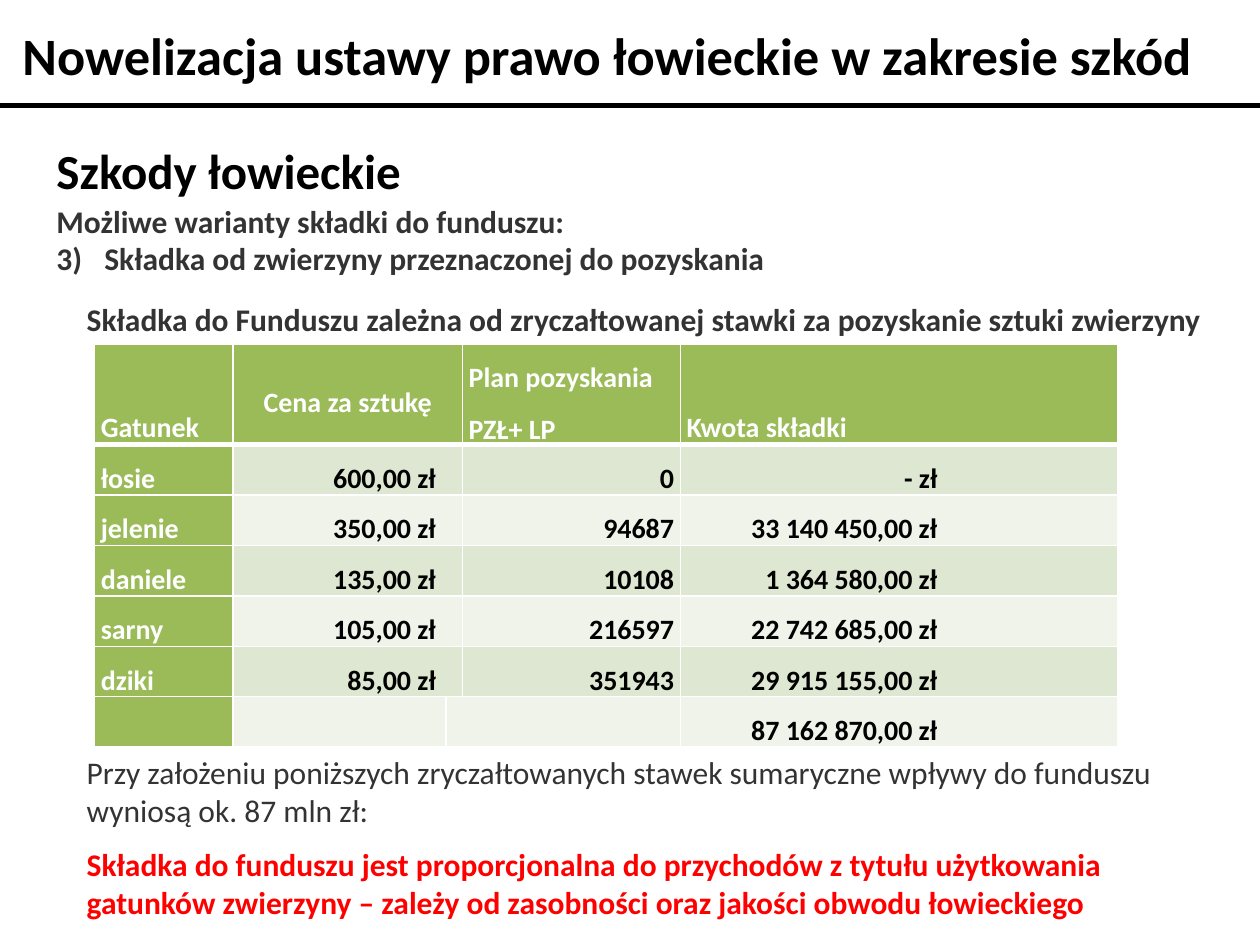
from lxml import etree
from pptx import Presentation
from pptx import util as u
from pptx.dml.color import RGBColor
from pptx.enum import shapes, text
from pptx.oxml.ns import qn

FONT = "Calibri"
BLACK, GREY, WHITE, RED = "000000", "333333", "FFFFFF", "FF0000"
GREEN, BANDS = "9BBB59", ("DEE7D1", "EFF3EA")
LEFT, CENTER, RIGHT = text.PP_ALIGN.LEFT, text.PP_ALIGN.CENTER, text.PP_ALIGN.RIGHT

TITLE = "Nowelizacja ustawy prawo łowieckie w zakresie szkód"
HEADING = "Szkody łowieckie"
VARIANTS = ["Możliwe warianty składki do funduszu:",
            "Składka od zwierzyny przeznaczonej do pozyskania"]
CAPTION = "Składka do Funduszu zależna od zryczałtowanej stawki za pozyskanie sztuki zwierzyny"
NOTE = ("Przy założeniu poniższych zryczałtowanych stawek sumaryczne wpływy "
        "do funduszu wyniosą ok. 87 mln zł:")
CONCLUSION = ("Składka do funduszu jest proporcjonalna do przychodów z tytułu użytkowania "
              "gatunków zwierzyny – zależy od zasobności oraz jakości obwodu łowieckiego")

HEADER = ["Gatunek", "Cena za sztukę", "Plan pozyskania PZŁ+ LP", "Kwota składki"]
SPECIES = [
    ["łosie", "600,00 zł", "0", "- zł"],
    ["jelenie", "350,00 zł", "94687", "33 140 450,00 zł"],
    ["daniele", "135,00 zł", "10108", "1 364 580,00 zł"],
    ["sarny", "105,00 zł", "216597", "22 742 685,00 zł"],
    ["dziki", "85,00 zł", "351943", "29 915 155,00 zł"],
]
TOTAL = ["", "", "", "87 162 870,00 zł"]
ROWS = [HEADER, *SPECIES, TOTAL]

# The narrow third column joins the price column, and the plan column in the total row.
COLUMN_WIDTHS = [1.1, 1.69, 0.13, 1.73, 3.47]
HEADER_HEIGHT, ROW_HEIGHT = 0.79, 0.4
GRID_COLUMNS, TOTAL_COLUMNS = [0, 1, 3, 4], [0, 1, 2, 4]
ALIGNMENTS = [LEFT, RIGHT, RIGHT, RIGHT]
RIGHT_INSETS = [0.05, 0.21, 0.05, 1.43]


def rgb(value):
    return RGBColor.from_string(value)


def write(paragraph, words, size=18, color=GREY, bold=True, align=LEFT, spacing=None):
    paragraph.text = words
    paragraph.alignment = align
    paragraph.line_spacing = spacing
    font = paragraph.font
    font.name, font.size, font.bold = FONT, u.Pt(size), bold
    font.color.rgb = rgb(color)


def add_text(slide, place, *lines, wrap=True, **style):
    frame = slide.shapes.add_textbox(*map(u.Inches, place)).text_frame
    frame.word_wrap = wrap
    for index, line in enumerate(lines):
        paragraph = frame.add_paragraph() if index else frame.paragraphs[0]
        write(paragraph, line, **style)
    return frame


def number(paragraph, start, indent):
    props = paragraph._p.get_or_add_pPr()
    props.set("marL", str(u.Inches(indent)))
    props.set("indent", str(-u.Inches(indent)))
    etree.SubElement(props, qn("a:buFont"), typeface="+mj-lt")
    etree.SubElement(props, qn("a:buAutoNum"), type="arabicParenR", startAt=str(start))
    # Numbering has to come before the default run format.
    for default in props.findall(qn("a:defRPr")):
        props.append(default)


def add_borders(cell, bottom):
    props = cell._tc.get_or_add_tcPr()
    for index, (side, width) in enumerate([("L", 1), ("R", 1), ("T", 1), ("B", bottom)]):
        border = etree.Element(qn(f"a:ln{side}"), w=str(u.Pt(width)))
        fill = etree.SubElement(border, qn("a:solidFill"))
        etree.SubElement(fill, qn("a:srgbClr"), val=WHITE)
        props.insert(index, border)


def add_contributions(slide, left, top):
    height = HEADER_HEIGHT + ROW_HEIGHT * (len(ROWS) - 1)
    table = slide.shapes.add_table(
        len(ROWS), len(COLUMN_WIDTHS),
        *map(u.Inches, (left, top, sum(COLUMN_WIDTHS), height))).table
    table.first_row = table.horz_banding = False
    for column, width in zip(table.columns, COLUMN_WIDTHS):
        column.width = u.Inches(width)

    last = len(ROWS) - 1
    for r, values in enumerate(ROWS):
        table.rows[r].height = u.Inches(ROW_HEIGHT if r else HEADER_HEIGHT)
        for c in range(len(COLUMN_WIDTHS)):
            cell = table.cell(r, c)
            cell.fill.solid()
            cell.fill.fore_color.rgb = rgb(GREEN if r == 0 or c == 0 else BANDS[(r - 1) % 2])
            add_borders(cell, bottom=1 if r else 3)
        joined = 2 if r == last else 1
        table.cell(r, joined).merge(table.cell(r, joined + 1))

        for c, words in enumerate(values):
            cell = table.cell(r, (TOTAL_COLUMNS if r == last else GRID_COLUMNS)[c])
            cell.margin_top = cell.margin_bottom = 0
            cell.margin_left = u.Inches(0.05)
            cell.margin_right = u.Inches(RIGHT_INSETS[c] if r else 0.05)
            cell.vertical_anchor = text.MSO_ANCHOR.BOTTOM
            align = ALIGNMENTS[c] if r else LEFT
            if r == 0 and c == 1:
                align, cell.vertical_anchor = CENTER, text.MSO_ANCHOR.MIDDLE
            write(cell.text_frame.paragraphs[0], words, size=16, align=align, spacing=1.5,
                  color=WHITE if r == 0 or c == 0 else BLACK)


def main():
    deck = Presentation()
    deck.slide_width, deck.slide_height = u.Inches(10), u.Inches(7.5)
    slide = deck.slides.add_slide(deck.slide_layouts[6])

    rule = slide.shapes.add_connector(
        shapes.MSO_CONNECTOR.STRAIGHT, 0, u.Inches(0.84), deck.slide_width, u.Inches(0.84))
    rule.line.color.rgb, rule.line.width = rgb(BLACK), u.Pt(2.75)
    etree.SubElement(rule._element.spPr, qn("a:effectLst"))

    add_text(slide, (0.08, 0.13, 9.88, 0.61), TITLE, size=30, color=BLACK)
    add_text(slide, (0.35, 1.07, 2.97, 0.57), HEADING, size=28, color=BLACK, wrap=False)
    variants = add_text(slide, (0.35, 1.55, 9.13, 0.71), *VARIANTS)
    number(variants.paragraphs[1], start=3, indent=0.38)
    add_text(slide, (0.59, 2.33, 9.13, 0.4), CAPTION)
    add_contributions(slide, 0.75, 2.73)
    add_text(slide, (0.59, 5.93, 9.13, 0.71), NOTE, bold=False)
    add_text(slide, (0.59, 6.66, 8.43, 0.71), CONCLUSION, color=RED)

    deck.save("out.pptx")


if __name__ == "__main__":
    main()
